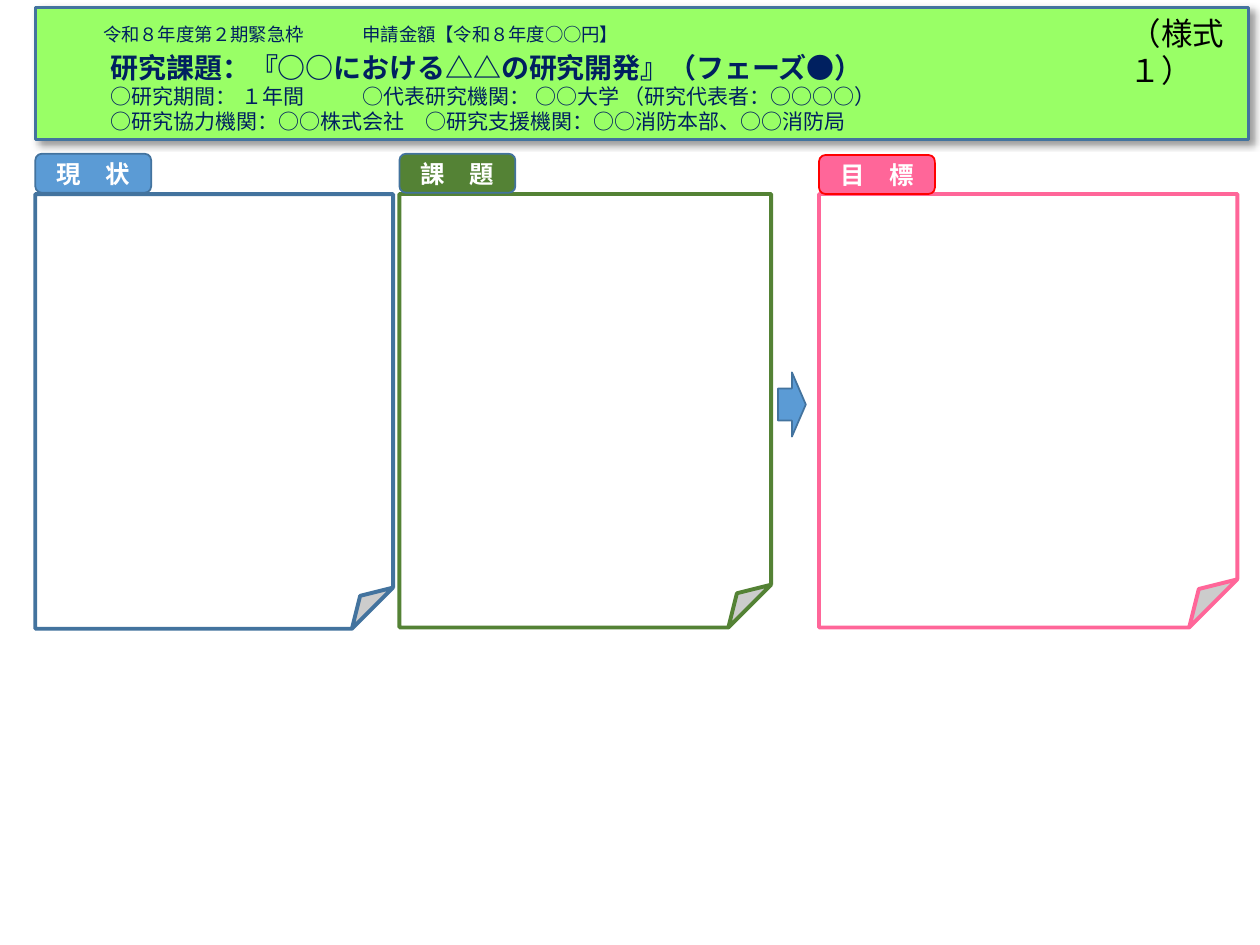
from lxml import etree
from pptx import Presentation
from pptx.dml.color import RGBColor
from pptx.enum.shapes import MSO_SHAPE as Shape
from pptx.enum.text import MSO_ANCHOR as Anchor, PP_ALIGN as Align
from pptx.oxml.ns import qn
from pptx.util import Inches, Pt

FONT = "Noto Sans CJK JP"
BLACK = RGBColor(0x00, 0x00, 0x00)
WHITE = RGBColor(0xFF, 0xFF, 0xFF)
NAVY = RGBColor(0x00, 0x20, 0x60)
LIME = RGBColor(0x99, 0xFF, 0x66)
BLUE = RGBColor(0x5B, 0x9B, 0xD5)
STEEL = RGBColor(0x43, 0x73, 0x9E)
GREEN = RGBColor(0x54, 0x82, 0x35)
PINK = RGBColor(0xFF, 0x66, 0x99)
RED = RGBColor(0xFF, 0x00, 0x00)

# Banner lines: text, size, bold, first-line indent, tab stop, line height
BANNER_LINES = [
    ("令和８年度第２期緊急枠\t申請金額【令和８年度○○円】", 10.5, False, 0.44, 3.77, 18),
    ("研究課題：『○○における△△の研究開発』（フェーズ●）", 16, True, 0.5, None, 22),
    ("○研究期間： １年間\t○代表研究機関： ○○大学 （研究代表者：○○○○）",
     12, False, 0.5, 2.24, 14.3),
    ("○研究協力機関：○○株式会社\t○研究支援機関：○○消防本部、○○消防局",
     12, False, 0.5, 3.16, 14.3),
]

# Sections: label, left, panel width, panel height, label top,
# panel line, label fill, label line
SECTIONS = [
    ("現　状", 0.28, 2.84, 3.45, 1.22, STEEL, BLUE, STEEL),
    ("課　題", 3.17, 2.95, 3.44, 1.22, GREEN, GREEN, STEEL),
    ("目　標", 6.5, 3.32, 3.44, 1.23, PINK, PINK, RED),
]


def add_box(slide, kind, left, top, width, height, fill, line, line_width):
    shape = slide.shapes.add_shape(
        kind, Inches(left), Inches(top), Inches(width), Inches(height))
    shape.shadow.inherit = False
    shape.fill.solid()
    shape.fill.fore_color.rgb = fill
    shape.line.color.rgb = line
    shape.line.width = Pt(line_width)
    return shape


def add_run(paragraph, text, size, color, bold=False, font=FONT):
    run = paragraph.add_run()
    run.text = text
    run.font.name = font
    run.font.size = Pt(size)
    run.font.bold = bold
    run.font.color.rgb = color
    if font == FONT:
        east_asian = etree.SubElement(run.font._element, qn("a:ea"))
        east_asian.set("typeface", font)


def add_drop_shadow(shape):
    effects = shape._element.spPr.find(qn("a:effectLst"))
    shadow = etree.SubElement(
        effects, qn("a:outerShdw"), blurRad=str(Pt(4)), dist=str(Pt(3)),
        dir="2700000", algn="tl", rotWithShape="0")
    color = etree.SubElement(shadow, qn("a:srgbClr"), val="000000")
    etree.SubElement(color, qn("a:alpha"), val="40000")


def set_fold(shape, ratio):
    geometry = shape._element.spPr.find(qn("a:prstGeom"))
    guides = geometry.find(qn("a:avLst"))
    if guides is None:
        guides = etree.SubElement(geometry, qn("a:avLst"))
    etree.SubElement(guides, qn("a:gd"), name="adj",
                     fmla=f"val {round(ratio * 100000)}")


def indent_first_line(paragraph, indent, tab):
    properties = paragraph._p.get_or_add_pPr()
    properties.set("marL", "0")
    properties.set("indent", str(Inches(indent)))
    if tab:
        tabs = etree.SubElement(properties, qn("a:tabLst"))
        etree.SubElement(tabs, qn("a:tab"), pos=str(Inches(tab)), algn="l")


def add_banner(slide):
    banner = add_box(slide, Shape.RECTANGLE, 0.28, 0.06, 9.63, 1.05,
                     LIME, STEEL, 1.5)
    add_drop_shadow(banner)
    frame = banner.text_frame
    frame.word_wrap = True
    frame.vertical_anchor = Anchor.MIDDLE
    for index, (text, size, bold, indent, tab, height) in enumerate(BANNER_LINES):
        paragraph = frame.add_paragraph() if index else frame.paragraphs[0]
        indent_first_line(paragraph, indent, tab)
        paragraph.alignment = Align.LEFT
        paragraph.line_spacing = Pt(height)
        add_run(paragraph, text, size, NAVY, bold)


def add_section(slide, label, left, width, height, label_top,
                panel_line, label_fill, label_line):
    panel = add_box(slide, Shape.FOLDED_CORNER, left, 1.54, width, height,
                    WHITE, panel_line, 2.25)
    set_fold(panel, 0.115)
    tag = add_box(slide, Shape.ROUNDED_RECTANGLE, left, label_top, 0.92, 0.31,
                  label_fill, label_line, 1)
    tag.text_frame.vertical_anchor = Anchor.MIDDLE
    paragraph = tag.text_frame.paragraphs[0]
    paragraph.alignment = Align.CENTER
    add_run(paragraph, label, 14, WHITE, bold=True)


def add_form_number(slide):
    box = slide.shapes.add_textbox(
        Inches(8.87), Inches(0.06), Inches(1.13), Inches(0.4))
    box.text_frame.word_wrap = True
    add_run(box.text_frame.paragraphs[0], "（様式１）", 18, BLACK, font="Calibri")


def main():
    presentation = Presentation()
    presentation.slide_width = Inches(10)
    presentation.slide_height = Inches(7.5)
    slide = presentation.slides.add_slide(presentation.slide_layouts[6])

    # Header
    add_banner(slide)

    # Current state, issues and goals
    for section in SECTIONS:
        add_section(slide, *section)

    # Arrow leading to the goals
    arrow = add_box(slide, Shape.DOWN_ARROW, 6.03, 3.1, 0.51, 0.22,
                    BLUE, STEEL, 1)
    arrow.rotation = 270

    add_form_number(slide)
    presentation.save("out.pptx")


if __name__ == "__main__":
    main()
